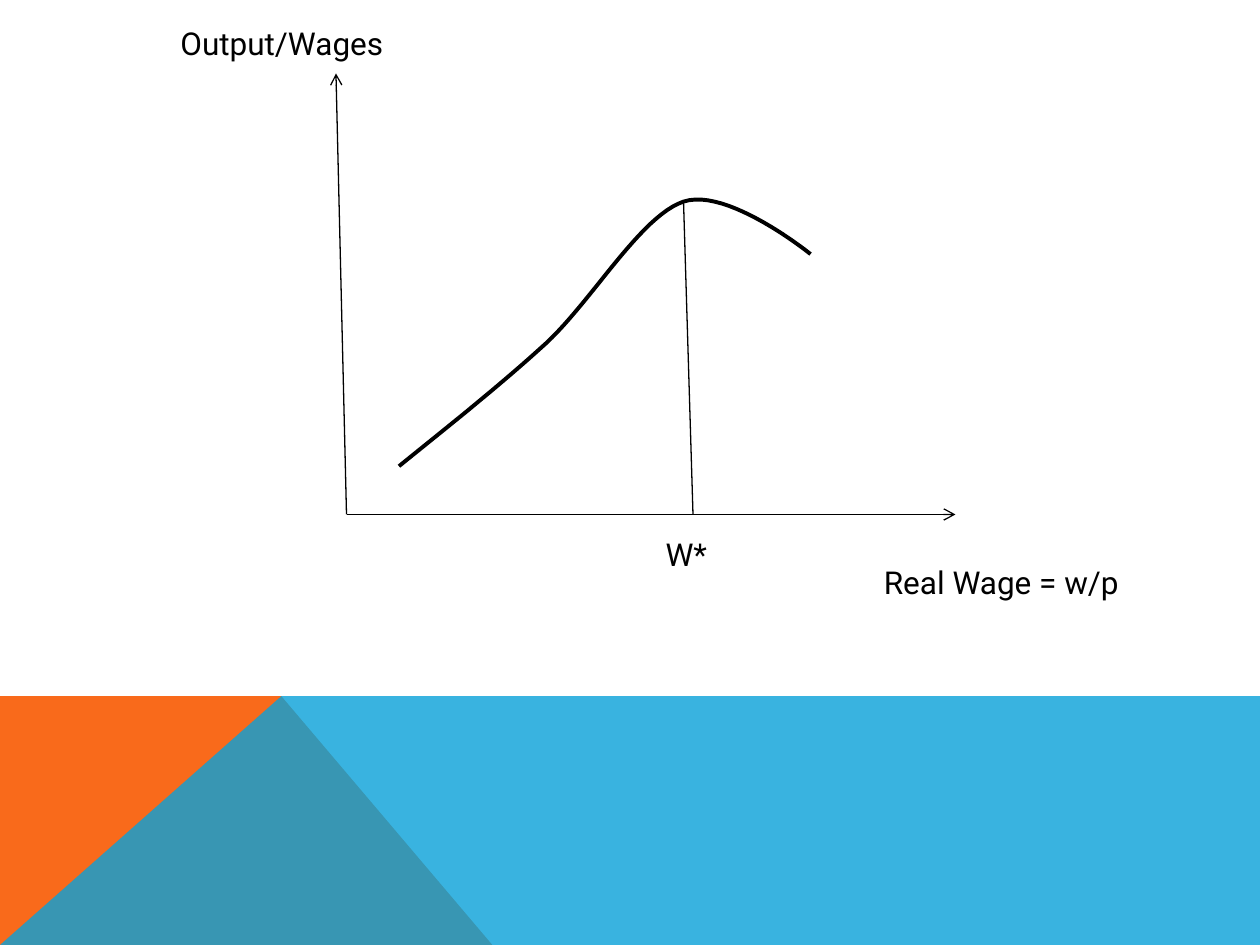
from lxml.etree import SubElement
from pptx import Presentation
from pptx.dml.color import RGBColor
from pptx.enum.shapes import MSO_CONNECTOR
from pptx.enum.text import MSO_AUTO_SIZE, PP_ALIGN
from pptx.oxml.ns import qn
from pptx.util import Inches, Pt

COLORS = {"ink": "000000", "orange": "F96A1B", "blue": "08A1D9"}
FONT = "Roboto"
COLUMNS, ROWS = 120, 90  # square grid cells, twelve to the inch
CELL = Inches(10) / COLUMNS


def cells(count):
    return round(count * CELL)


def place(box, point):
    """Turn a grid point inside a box into slide coordinates."""
    return cells(box[0] + point[0]), cells(box[1] + point[1])


def color(name):
    return RGBColor.from_string(COLORS[name])


def add_outline(page, box, points, close):
    start, *rest = [place(box, point) for point in points]
    builder = page.shapes.build_freeform(*start)
    builder.add_line_segments(rest, close=close)
    shape = builder.convert_to_shape()
    shape.shadow.inherit = False
    return shape


def add_panel(page, box, points, fill, opacity=100):
    panel = add_outline(page, box, points, close=True)
    panel.fill.solid()
    panel.fill.fore_color.rgb = color(fill)
    panel.line.fill.background()
    if opacity < 100:
        tint = panel.fill._xPr.find(".//" + qn("a:srgbClr"))
        SubElement(tint, qn("a:alpha")).set("val", str(opacity * 1000))


def add_line(page, box, start, end, arrow=False):
    line = page.shapes.add_connector(
        MSO_CONNECTOR.STRAIGHT, *place(box, start), *place(box, end))
    line.line.color.rgb = color("ink")
    line.line.width = Pt(0.75)
    if arrow:
        SubElement(line.line._get_or_add_ln(), qn("a:tailEnd")).set("type", "arrow")
    SubElement(line._element.spPr, qn("a:effectLst"))


def add_label(page, box, corner, width, height, text):
    label = page.shapes.add_textbox(*place(box, corner), cells(width), cells(height))
    frame = label.text_frame
    frame.word_wrap = True
    frame.auto_size = MSO_AUTO_SIZE.SHAPE_TO_FIT_TEXT
    frame.text = text
    para = frame.paragraphs[0]
    para.alignment = PP_ALIGN.LEFT
    span = para.runs[0]
    span.font.name, span.font.size = FONT, Pt(18)
    span.font.color.rgb = color("ink")


def bezier(start, first, second, end, steps=24):
    """Points along a cubic curve, leaving out its start."""
    for step in range(1, steps + 1):
        t = step / steps
        weights = ((1 - t) ** 3, 3 * t * (1 - t) ** 2, 3 * t * t * (1 - t), t ** 3)
        yield tuple(sum(weight * value for weight, value in zip(weights, axis))
                    for axis in zip(start, first, second, end))


def draw_footer_band(page, box):
    _, _, width, height = box
    peak = (26.8, 0)
    # Orange corner, then the translucent blue sweep over it
    add_panel(page, box, [(0, height), (0, 0), peak, (46.9, height)], "orange")
    add_panel(page, box, [(0, height), peak, (width, 0), (width, height)],
              "blue", opacity=80)


def draw_wage_graph(page, box):
    _, _, width, height = box
    origin, optimum = (1, height), (33.1, 12.2)

    # Axes
    for tip in ((0, 0), (width, height)):
        add_line(page, box, origin, tip, arrow=True)

    # Axis titles
    add_label(page, box, (51, 46), 31, 4.8, "Real Wage = w/p")
    add_label(page, box, (-16, -5.3), 23, 5, "Output/Wages")

    # Output curve: the knots with the two handles between them
    knots = [(6, 37.4), (20, 25.7), optimum, (45.2, 17.2)]
    handles = [((10.7, 33.6), (15.5, 29.8)),
               ((24.5, 21.5), (29, 13.6)),
               ((37.3, 10.8), (45.2, 17.2))]
    points = knots[:1]
    for start, pair, end in zip(knots, handles, knots[1:]):
        points.extend(bezier(start, *pair, end))
    curve = add_outline(page, box, points, close=False)
    curve.fill.background()
    curve.line.color.rgb = color("ink")
    curve.line.width = Pt(2.25)

    # Efficiency wage
    add_line(page, box, optimum, (34, height))
    add_label(page, box, (30.2, 43.4), 15, 4.8, "W*")


def main():
    deck = Presentation()
    deck.slide_width, deck.slide_height = cells(COLUMNS), cells(ROWS)
    page = deck.slides.add_slide(deck.slide_layouts[6])
    draw_footer_band(page, (0, 66.3, COLUMNS, ROWS - 66.3))
    draw_wage_graph(page, (32, 7, 59, 42))
    deck.save("out.pptx")


if __name__ == "__main__":
    main()
